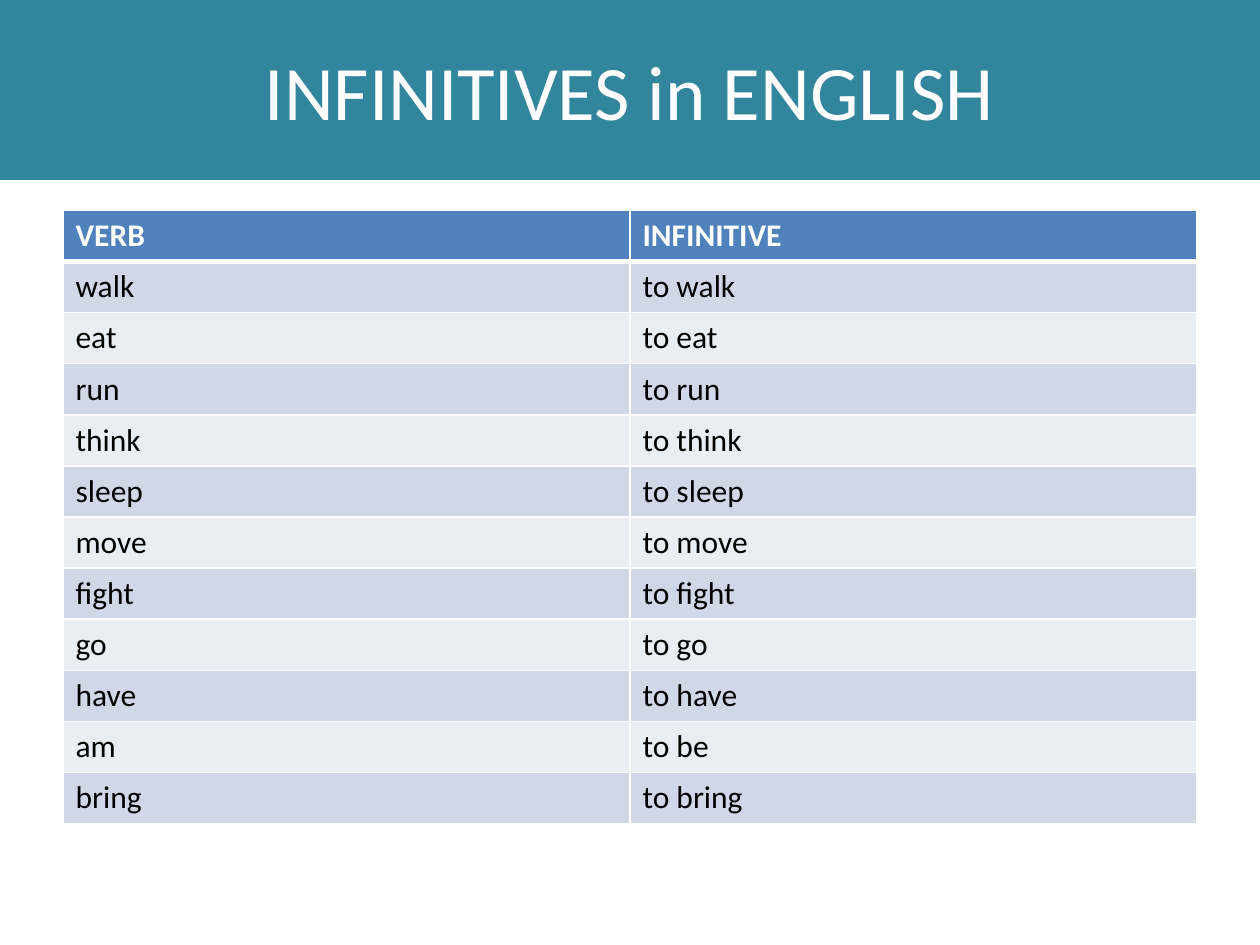
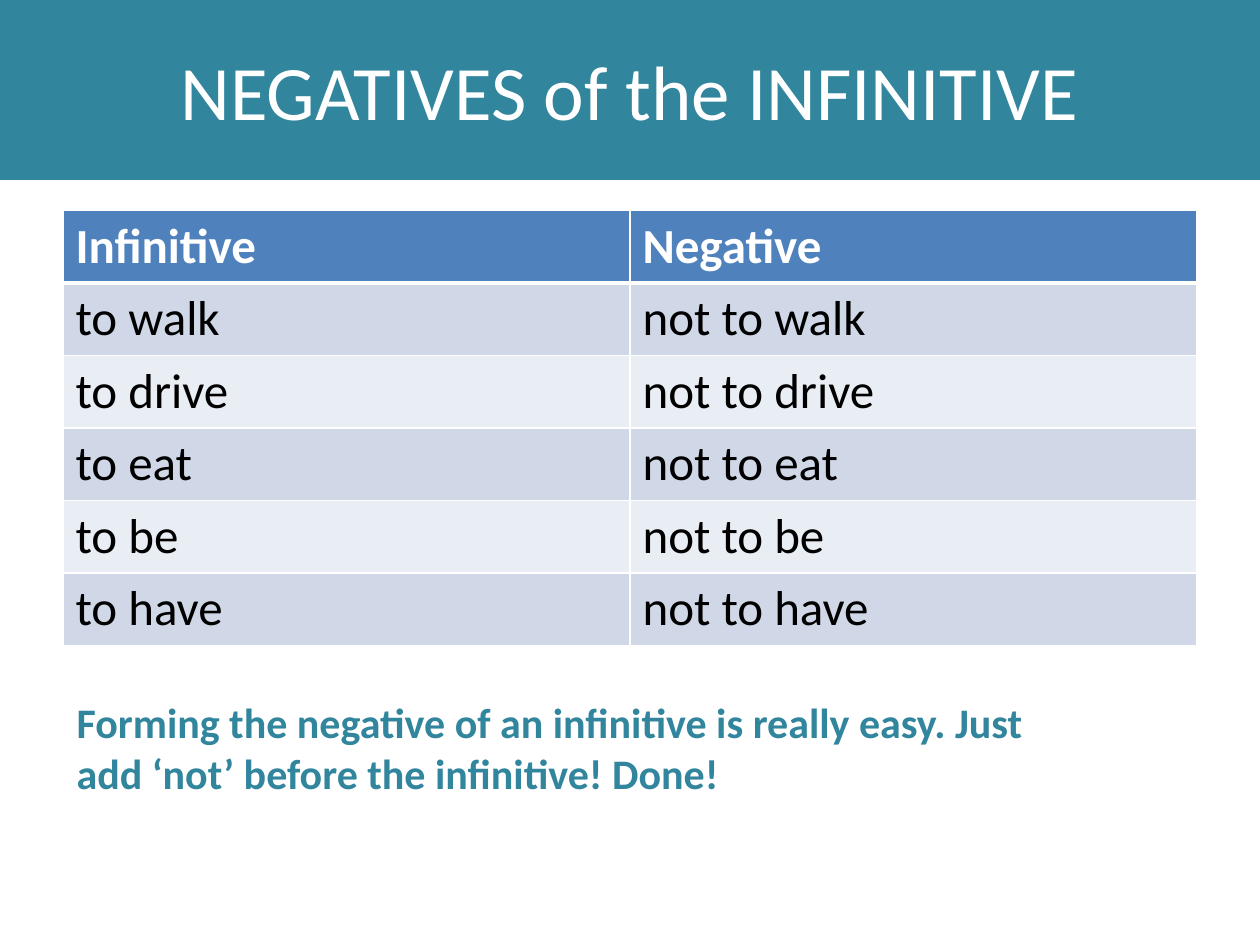
from lxml import etree
from pptx import Presentation
from pptx.dml.color import RGBColor
from pptx.enum.text import MSO_ANCHOR as Anchor, MSO_AUTO_SIZE as AutoSize, PP_ALIGN as Align
from pptx.oxml.ns import qn
from pptx.util import Inches, Pt

# Shared style
FONT = "Calibri"
TEAL, WHITE, BLACK = "31859C", "FFFFFF", "000000"
HEADER_FILL = "4F81BD"
BAND_FILLS = ("D0D8E8", "E9EDF4")
TITLE_ONLY = 5
TITLE_BOX = (0, 0, 10, 1.42)

# Content
VERBS = ("walk", "eat", "run", "think", "sleep", "move",
         "fight", "go", "have", "am", "bring")
IRREGULAR = {"am": "be"}
NEGATED = ("walk", "drive", "eat", "be", "have")
NEGATIVE_RULE = ("Forming the negative of an infinitive is really easy. "
                 "Just add ‘not’ before the infinitive! Done!")


def color(hex_code):
    return RGBColor.from_string(hex_code)


def format_text(frame, size, hex_code, bold=False):
    for paragraph in frame.paragraphs:
        for run in paragraph.runs:
            run.font.name = FONT
            run.font.size = Pt(size)
            run.font.bold = bold
            run.font.color.rgb = color(hex_code)


def set_borders(cell, top, bottom):
    """Draw white cell borders; widths are in points."""
    properties = cell._tc.get_or_add_tcPr()
    sides = (("a:lnL", 1), ("a:lnR", 1), ("a:lnT", top), ("a:lnB", bottom))
    for position, (tag, width) in enumerate(sides):
        line = etree.Element(qn(tag), w=str(Pt(width)))
        fill = etree.SubElement(line, qn("a:solidFill"))
        etree.SubElement(fill, qn("a:srgbClr"), val=WHITE)
        properties.insert(position, line)


def add_titled_slide(prs, heading):
    """Add a slide whose title fills the teal band at the top."""
    slide = prs.slides.add_slide(prs.slide_layouts[TITLE_ONLY])
    title = slide.shapes.title
    title.left, title.top, title.width, title.height = map(Inches, TITLE_BOX)
    title.fill.solid()
    title.fill.fore_color.rgb = color(TEAL)
    title.line.color.rgb = color(TEAL)
    title.line.width = Pt(0.75)
    frame = title.text_frame
    frame.text = heading
    frame.vertical_anchor = Anchor.MIDDLE
    frame.paragraphs[0].alignment = Align.CENTER
    format_text(frame, 44, WHITE)
    return slide


def add_word_table(slide, box, rows, size):
    """Fill the box with equal rows and columns under a header row."""
    left, top, width, height = map(Inches, box)
    column_count = len(rows[0])
    table = slide.shapes.add_table(len(rows), column_count,
                                   left, top, width, height).table
    for column in table.columns:
        column.width = width // column_count
    for index, words in enumerate(rows):
        table.rows[index].height = height // len(rows)
        is_header = index == 0
        fill = HEADER_FILL if is_header else BAND_FILLS[(index - 1) % 2]
        for cell, word in zip(table.rows[index].cells, words):
            cell.text = word
            format_text(cell.text_frame, size,
                        WHITE if is_header else BLACK, is_header)
            cell.fill.solid()
            cell.fill.fore_color.rgb = color(fill)
            set_borders(cell, 3 if index == 1 else 1, 3 if is_header else 1)


def add_rule(slide, box, wording):
    """Add the grammar rule below the table."""
    frame = slide.shapes.add_textbox(*map(Inches, box)).text_frame
    frame.word_wrap = True
    frame.auto_size = AutoSize.SHAPE_TO_FIT_TEXT
    frame.text = wording
    format_text(frame, 24, TEAL, bold=True)


def build_infinitives(prs):
    slide = add_titled_slide(prs, "INFINITIVES in ENGLISH")
    rows = [("VERB", "INFINITIVE")]
    rows += [(verb, f"to {IRREGULAR.get(verb, verb)}") for verb in VERBS]
    add_word_table(slide, (0.5, 1.67, 9, 4.87), rows, 18)


def build_negatives(prs):
    slide = add_titled_slide(prs, "NEGATIVES of the INFINITIVE")
    rows = [("Infinitive", "Negative")]
    rows += [(f"to {verb}", f"not to {verb}") for verb in NEGATED]
    add_word_table(slide, (0.5, 1.67, 9, 3.4), rows, 28)
    add_rule(slide, (0.51, 5.48, 8.19, 0.91), NEGATIVE_RULE)


def main():
    prs = Presentation()
    prs.slide_width, prs.slide_height = Inches(10), Inches(7.5)
    build_infinitives(prs)
    build_negatives(prs)
    prs.save("out.pptx")


if __name__ == "__main__":
    main()
